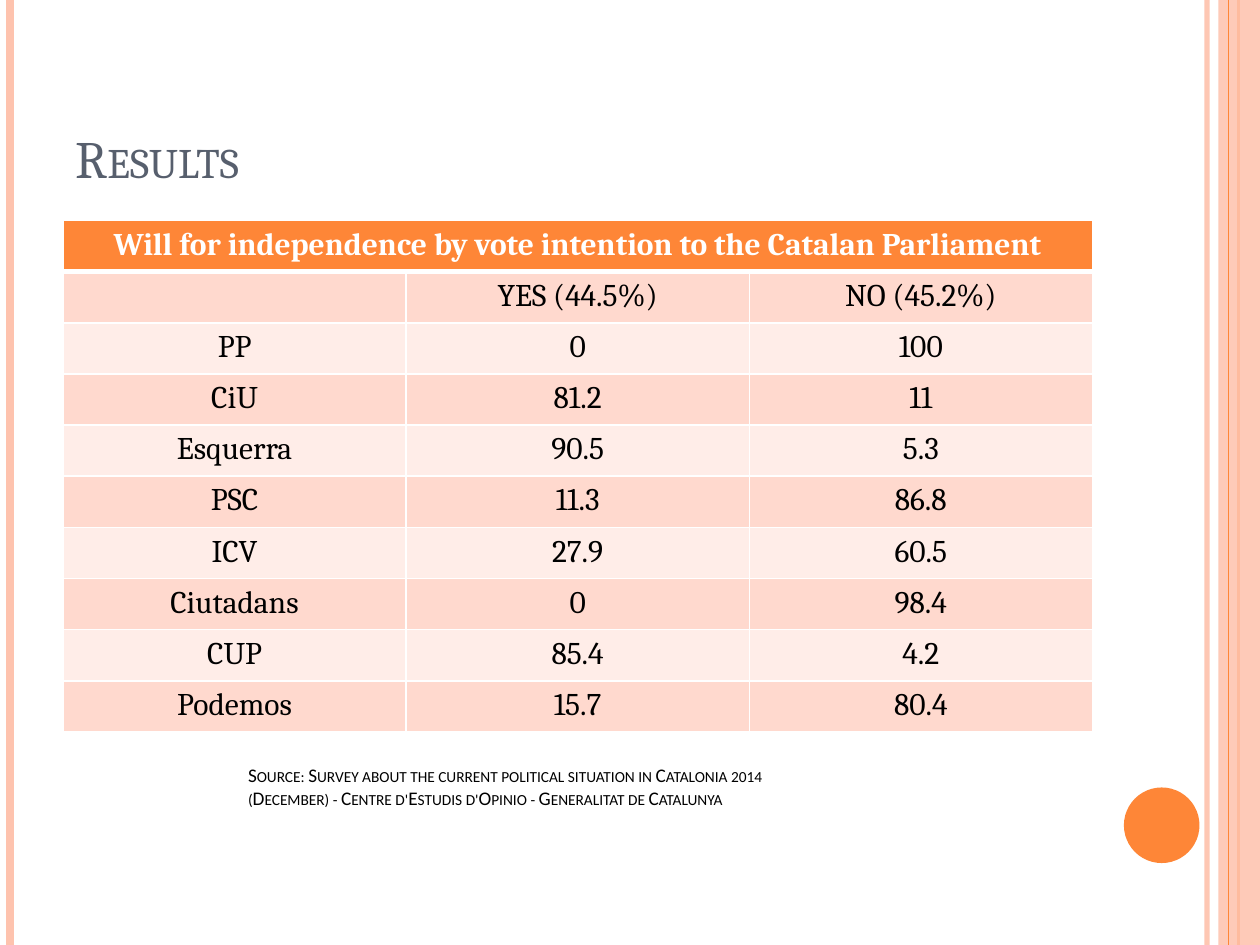
from lxml import etree
from pptx import Presentation
from pptx.dml.color import RGBColor
from pptx.enum.shapes import MSO_CONNECTOR, MSO_SHAPE
from pptx.enum.text import MSO_ANCHOR, PP_ALIGN
from pptx.oxml.ns import qn
from pptx.util import Inches, Pt

STRAIGHT = MSO_CONNECTOR.STRAIGHT
RECTANGLE, OVAL = MSO_SHAPE.RECTANGLE, MSO_SHAPE.OVAL
TOP, BOTTOM = MSO_ANCHOR.TOP, MSO_ANCHOR.BOTTOM
CENTER = PP_ALIGN.CENTER

COLORS = {
    "orange": "FE8637",
    "peach": "FEC3AE",
    "band_dark": "FFD9CE",
    "band_light": "FFEDE8",
    "title": "575F6D",
    "text": "000000",
    "white": "FFFFFF",
}
TITLE_FORMAT = {"name": "Cambria", "size": Pt(30)}
HEADER_FORMAT = {"name": "Cambria", "size": Pt(18), "bold": True}
BODY_FORMAT = {"name": "Cambria", "size": Pt(18), "bold": False}
SOURCE_FORMAT = {"name": "Calibri", "size": Pt(11)}

TABLE_TITLE = "Will for independence by vote intention to the Catalan Parliament"
RESULTS = [
    ("", "YES (44.5%)", "NO (45.2%)"),
    ("PP", "0", "100"),
    ("CiU", "81.2", "11"),
    ("Esquerra", "90.5", "5.3"),
    ("PSC", "11.3", "86.8"),
    ("ICV", "27.9", "60.5"),
    ("Ciutadans", "0", "98.4"),
    ("CUP", "85.4", "4.2"),
    ("Podemos", "15.7", "80.4"),
]
SOURCE = (
    "Source: Survey about the current political situation in Catalonia 2014 "
    "(December) - Centre d'Estudis d'Opinio - Generalitat de Catalunya"
)


def color(name):
    """Return the named colour."""
    return RGBColor.from_string(COLORS[name])


def set_opacity(element, percent):
    """Make the colours inside an element partly transparent."""
    for rgb in element.iter(qn("a:srgbClr")):
        etree.SubElement(rgb, qn("a:alpha"), val=str(percent * 1000))


def add_run(paragraph, text, color_name, font_format):
    """Add a formatted run and return it."""
    run = paragraph.add_run()
    run.text = text
    run.font.color.rgb = color(color_name)
    for attribute, value in font_format.items():
        setattr(run.font, attribute, value)
    return run


def add_stripe(slide, x, top, height, color_name, width, opacity=100):
    """Draw a vertical line."""
    line = slide.shapes.add_connector(STRAIGHT, x, top, x, top + height)
    line.line.color.rgb = color(color_name)
    line.line.width = Pt(width)
    if opacity < 100:
        set_opacity(line.element, opacity)
    etree.SubElement(line.element.spPr, qn("a:effectLst"))


def add_filled_shape(slide, kind, box, color_name):
    """Draw a plain shape without an outline."""
    shape = slide.shapes.add_shape(kind, *box)
    shape.shadow.inherit = False
    shape.fill.solid()
    shape.fill.fore_color.rgb = color(color_name)
    shape.line.fill.background()
    return shape


def add_frame(slide, left, top, width, height):
    """Draw the side stripes, the right band and the disc."""
    right = left + width
    add_stripe(slide, right - Inches(0.42), top, height, "peach", 3, 93)
    add_stripe(slide, left + Inches(0.08), top, height, "peach", 4.5)
    add_stripe(slide, right - Inches(0.17), top, height, "orange", 1.5)
    band_width = Inches(0.33)
    band_box = (right - band_width, top, band_width, height)
    band = add_filled_shape(slide, RECTANGLE, band_box, "peach")
    set_opacity(band.element.spPr, 87)
    add_stripe(slide, right - Inches(0.25), top, height, "orange", 0.75)
    size = Inches(0.6)
    disc_box = (right - Inches(1.08), top + Inches(6.25), size, size)
    add_filled_shape(slide, OVAL, disc_box, "orange")


def add_small_caps(slide, box, text, color_name, font_format, anchor):
    """Write a wrapped text box in small capitals."""
    frame = slide.shapes.add_textbox(*box).text_frame
    frame.word_wrap = True
    frame.vertical_anchor = anchor
    run = add_run(frame.paragraphs[0], text, color_name, font_format)
    run.font.element.set("cap", "small") if hasattr(run.font, "element") else run._r.get_or_add_rPr().set("cap", "small")


def set_borders(cell, widths):
    """Give a cell white borders of the given widths in points."""
    properties = cell._tc.get_or_add_tcPr()
    for side, width in widths.items():
        border = etree.SubElement(properties, qn(f"a:ln{side}"), w=str(Pt(width)))
        fill = etree.SubElement(border, qn("a:solidFill"))
        etree.SubElement(fill, qn("a:srgbClr"), val=COLORS["white"])


def format_cell(cell, text, fill, text_color, font_format, widths):
    """Fill one table cell with centred text."""
    set_borders(cell, widths)
    cell.fill.solid()
    cell.fill.fore_color.rgb = color(fill)
    paragraph = cell.text_frame.paragraphs[0]
    paragraph.alignment = CENTER
    if text:
        add_run(paragraph, text, text_color, font_format)


def add_results_table(slide, left, top, width, height):
    """Build the banded table under its merged header."""
    rows = [(TABLE_TITLE, "", "")] + RESULTS
    shape = slide.shapes.add_table(len(rows), 3, left, top, width, height)
    table = shape.table
    table.cell(0, 0).merge(table.cell(0, 2))
    for row_index, values in enumerate(rows):
        table.rows[row_index].height = height // len(rows)
        header = row_index == 0
        band = "band_dark" if row_index % 2 else "band_light"
        widths = {
            "L": 1,
            "R": 1,
            "T": 3 if row_index == 1 else 1,
            "B": 3 if header else 1,
        }
        for column_index, text in enumerate(values):
            format_cell(
                table.cell(row_index, column_index),
                text,
                "orange" if header else band,
                "white" if header else "text",
                HEADER_FORMAT if header else BODY_FORMAT,
                widths,
            )


def main():
    """Build and save the results slide."""
    presentation = Presentation()
    presentation.slide_width = Inches(10)
    presentation.slide_height = Inches(7.5)
    slide = presentation.slides.add_slide(presentation.slide_layouts[6])
    add_frame(slide, 0, 0, presentation.slide_width, presentation.slide_height)
    left, width = Inches(0.5), Inches(8.17)
    title_box = (left, Inches(0.3), width, Inches(1.25))
    add_small_caps(slide, title_box, "Results", "title", TITLE_FORMAT, BOTTOM)
    add_results_table(slide, left, Inches(1.75), width, Inches(4.06))
    source_box = (Inches(1.87), Inches(6.01), Inches(4.71), Inches(0.47))
    add_small_caps(slide, source_box, SOURCE, "text", SOURCE_FORMAT, TOP)
    presentation.save("out.pptx")


if __name__ == "__main__":
    main()
